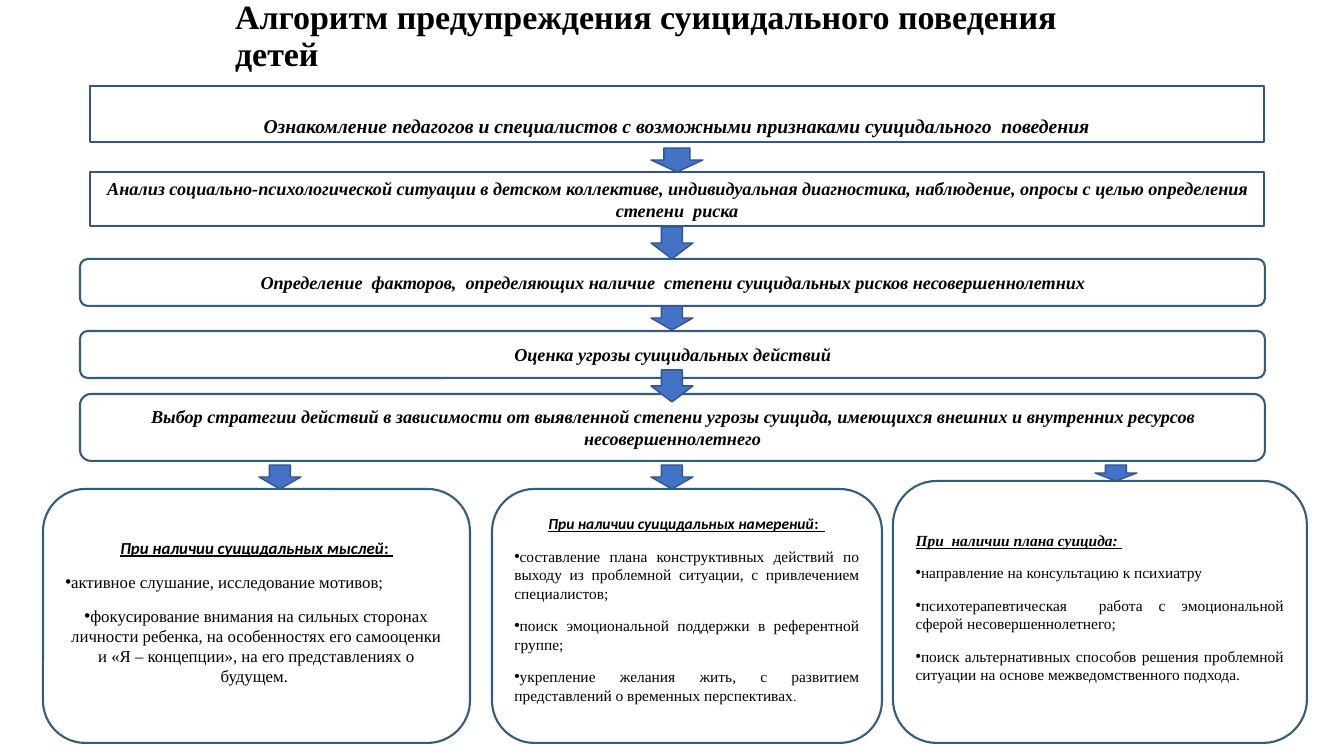
from lxml import etree
from pptx import Presentation
from pptx.dml.color import RGBColor
from pptx.enum.shapes import MSO_SHAPE
from pptx.enum.text import MSO_ANCHOR, MSO_AUTO_SIZE, PP_ALIGN
from pptx.oxml.ns import qn
from pptx.util import Pt

PX = 12192000 / 1344
RECT, ROUND, DOWN = MSO_SHAPE.RECTANGLE, MSO_SHAPE.ROUNDED_RECTANGLE, MSO_SHAPE.DOWN_ARROW
TOP, MIDDLE = MSO_ANCHOR.TOP, MSO_ANCHOR.MIDDLE
LEFT, CENTER, JUSTIFY = PP_ALIGN.LEFT, PP_ALIGN.CENTER, PP_ALIGN.JUSTIFY
SERIF, SANS = "Times New Roman", "Calibri"
THEME = {
    "text": RGBColor(0x00, 0x00, 0x00),
    "arrow": RGBColor(0x44, 0x72, 0xC4),
    "edge": RGBColor(0x32, 0x54, 0x91),
    "round_edge": RGBColor(0x34, 0x5C, 0x7D),
    "title": 24.3,
    "first": 14,
    "step": 13,
    "large": 12,
    "small": 11,
    "tiny": 9,
}


def add_text(p, text, size="step", font=SERIF, bold=False, italic=False, underline=False):
    r = p.add_run()
    r.text = text
    r.font.name = font
    r.font.size = Pt(THEME[size])
    r.font.bold, r.font.italic, r.font.underline = bold, italic, underline
    r.font.color.rgb = THEME["text"]


def add_box(kind, box, edge, width=1.5, fill=None):
    """Add a preset shape; box is left, top, width, height in px."""
    sp = s.shapes.add_shape(kind, *[round(v * PX) for v in box])
    sp.shadow.inherit = False
    if fill is None:
        sp.fill.background()
    else:
        sp.fill.solid()
        sp.fill.fore_color.rgb = THEME[fill]
    sp.line.color.rgb = THEME[edge]
    sp.line.width = Pt(width)
    sp.text_frame.word_wrap = True
    return sp


prs = Presentation()
prs.slide_width, prs.slide_height = round(1344 * PX), round(756 * PX)
s = prs.slides.add_slide(prs.slide_layouts[5])

title = s.shapes.title
title.left, title.top, title.width, title.height = [round(v * PX) for v in (225, 21, 927, 45)]
tf = title.text_frame
tf.word_wrap = True
tf.auto_size = MSO_AUTO_SIZE.NONE
tf.vertical_anchor = MIDDLE
tf.margin_top, tf.margin_bottom = round(5 * PX), round(18 * PX)
p = tf.paragraphs[0]
p.alignment = LEFT
p.line_spacing = 0.9
add_text(p, "Алгоритм предупреждения суицидального поведения детей", size="title", bold=True)

# Steps: shape, box, edge colour, text size, top inset, text
STEPS = [
    (RECT, (90, 86, 1174, 56), "edge", "first", 29,
     "Ознакомление педагогов и специалистов с возможными признаками суицидального  поведения"),
    (RECT, (90, 172, 1174, 54), "edge", "step", 5,
     "Анализ социально-психологической ситуации в детском коллективе, индивидуальная диагностика, "
     "наблюдение, опросы с целью определения степени  риска"),
    (ROUND, (80, 259, 1185, 47), "round_edge", "step", 5,
     "Определение  факторов,  определяющих наличие  степени суицидальных рисков несовершеннолетних"),
    (ROUND, (80, 331, 1185, 47), "round_edge", "step", 5,
     "Оценка угрозы суицидальных действий"),
    (ROUND, (80, 394, 1185, 67), "round_edge", "step", 5,
     "Выбор стратегии действий в зависимости от выявленной степени угрозы суицида, имеющихся "
     "внешних и внутренних ресурсов несовершеннолетнего"),
]
for kind, box, edge, size, inset, text in STEPS:
    tf = add_box(kind, box, edge).text_frame
    tf.vertical_anchor = MIDDLE
    tf.margin_top = round(inset * PX)
    p = tf.paragraphs[0]
    p.alignment = CENTER
    add_text(p, text, size=size, bold=True, italic=True)

# Cards: box, top inset, text size, heading font and alignment,
# heading as (text, italic) runs, items as (alignment, text, closing mark)
CARDS = [
    ((43, 489, 427, 254), 36, "large", SANS, CENTER,
     [("При наличии суицидальных мыслей", True), (": ", False)],
     [(JUSTIFY, "активное слушание, исследование мотивов; ", ""),
      (CENTER, "фокусирование внимания на сильных сторонах личности ребенка, на особенностях "
               "его самооценки и «Я – концепции», на его представлениях о будущем. ", "")]),
    ((492, 489, 390, 254), 13, "small", SANS, CENTER,
     [("При наличии суицидальных намерений", True), (":  ", False)],
     [(JUSTIFY, "составление плана конструктивных действий по выходу из проблемной ситуации, "
                "с привлечением специалистов; ", ""),
      (JUSTIFY, "поиск эмоциональной поддержки в референтной группе; ", ""),
      (JUSTIFY, "укрепление желания жить, с развитием представлений о временных перспективах", ".")]),
    ((893, 481, 414, 262), 37, "small", SERIF, JUSTIFY,
     [("При  наличии плана суицида: ", True)],
     [(JUSTIFY, "направление на консультацию к психиатру", ""),
      (JUSTIFY, "психотерапевтическая  работа с эмоциональной сферой несовершеннолетнего;", ""),
      (JUSTIFY, "поиск альтернативных способов решения проблемной ситуации на основе "
                "межведомственного подхода.", "")]),
]
for box, inset, size, font, align, heading, items in CARDS:
    tf = add_box(ROUND, box, "round_edge").text_frame
    tf.vertical_anchor = TOP
    tf.margin_top = round(inset * PX)
    p = tf.paragraphs[0]
    p.alignment = align
    p.space_after = Pt(10)
    for text, italic in heading:
        add_text(p, text, size=size, font=font, bold=True, italic=italic, underline=True)
    for align, text, mark in items:
        p = tf.add_paragraph()
        p.alignment = align
        p.space_after = Pt(10)
        pPr = p._p.get_or_add_pPr()
        pPr.set("marL", "0")
        pPr.set("indent", "0")
        etree.SubElement(pPr, qn("a:buFont")).set("typeface", "Arial")
        etree.SubElement(pPr, qn("a:buChar")).set("char", "•")
        add_text(p, text, size=size)
        if mark:
            add_text(p, mark, size="tiny")

ARROWS = [
    (651, 148, 52, 24), (651, 227, 42, 32), (651, 306, 42, 24), (651, 370, 42, 32),
    (259, 465, 42, 24), (651, 465, 42, 24), (1095, 465, 42, 16),
]
for box in ARROWS:
    add_box(DOWN, box, "edge", width=1, fill="arrow")

prs.save("out.pptx")
